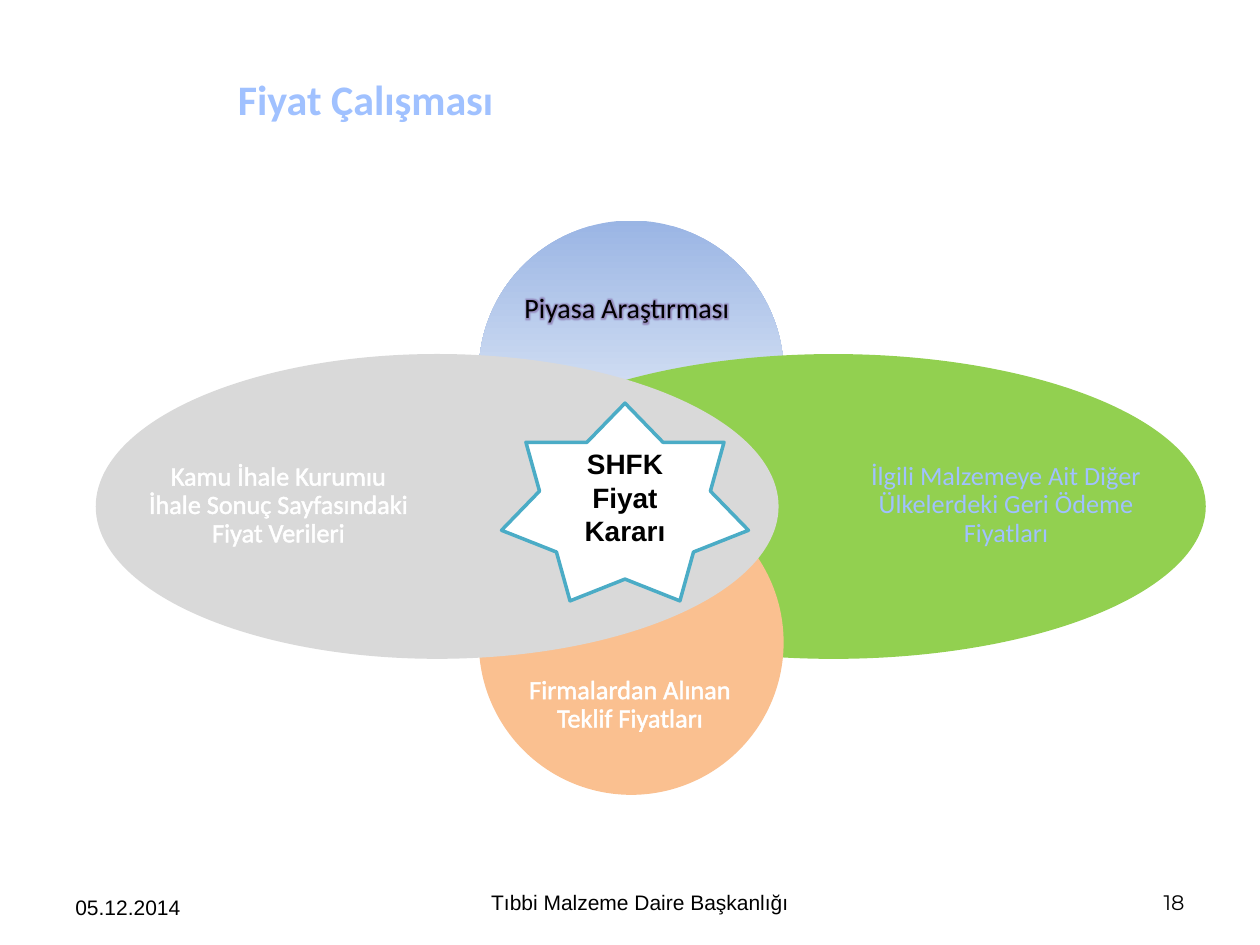
from lxml import etree
from pptx import Presentation
from pptx.dml.color import RGBColor
from pptx.enum.shapes import MSO_SHAPE
from pptx.enum.text import MSO_ANCHOR, PP_ALIGN
from pptx.oxml.ns import qn
from pptx.util import Pt

OVAL, STAR = MSO_SHAPE.OVAL, MSO_SHAPE.STAR_7_POINT
LEFT, CENTER, RIGHT = PP_ALIGN.LEFT, PP_ALIGN.CENTER, PP_ALIGN.RIGHT
MIDDLE, BOTTOM = MSO_ANCHOR.MIDDLE, MSO_ANCHOR.BOTTOM

BLACK = RGBColor(0x00, 0x00, 0x00)
WHITE = RGBColor(0xFF, 0xFF, 0xFF)
SKY = RGBColor(0xA0, 0xC1, 0xFF)
BLUE = RGBColor(0x9A, 0xB5, 0xE4)
GREEN = RGBColor(0x92, 0xD0, 0x50)
ORANGE = RGBColor(0xFA, 0xC0, 0x90)
GRAY = RGBColor(0xD9, 0xD9, 0xD9)
TEAL = RGBColor(0x4B, 0xAC, 0xC6)
PURPLE = RGBColor(0x80, 0x64, 0xA2)


def write(s, text, size, color, font="Arial", bold=False, align=CENTER, anchor=MIDDLE):
    tf = s.text_frame
    tf.word_wrap = True
    tf.vertical_anchor = anchor
    p = tf.paragraphs[0]
    p.alignment = align
    p.font.name = font
    p.font.size = Pt(size)
    p.font.bold = bold
    p.font.color.rgb = color
    r = p.add_run()
    r.text = text
    return r


def add_text(slide, box, text, size, color, **style):
    s = slide.shapes.add_textbox(*map(Pt, box))
    write(s, text, size, color, **style)
    return s


def add_shape(slide, kind, box, color):
    s = slide.shapes.add_shape(kind, *map(Pt, box))
    s.shadow.inherit = False
    s.fill.solid()
    s.fill.fore_color.rgb = color
    s.line.fill.background()
    return s


def add_label(slide, box, text, size, color):
    s = add_text(slide, box, text, size, color, font="Calibri")
    tf = s.text_frame
    tf.margin_left = tf.margin_right = tf.margin_top = tf.margin_bottom = 0
    p = tf.paragraphs[0]
    p.line_spacing = 0.9
    return p.runs[0]


def fade_down(s, top, bottom):
    s.fill.gradient()
    s.fill.gradient_angle = 270
    for stop, color, place in zip(s.fill.gradient_stops, (top, bottom), (0, 1)):
        stop.color.rgb = color
        stop.position = place


def add_color(parent, color):
    return etree.SubElement(parent, qn("a:srgbClr"), val=str(color))


def outline(r, color, width):
    ln = etree.SubElement(r.font._element, qn("a:ln"), w=str(Pt(width)))
    add_color(etree.SubElement(ln, qn("a:solidFill")), color)


def glow(r, color, radius):
    effects = etree.SubElement(r.font._element, qn("a:effectLst"))
    halo = etree.SubElement(effects, qn("a:glow"), rad=str(Pt(radius)))
    etree.SubElement(add_color(halo, color), qn("a:alpha"), val="60000")


def add_venn(slide):
    circle_x, wide_y, d = 273.6, 202.3, 174.2
    label_x, label_w, label_h = 293, 134, 55.4
    side_y, side_h = 221.8, 134

    top = add_shape(slide, OVAL, (circle_x, 126, d, d), BLUE)
    fade_down(top, BLUE, WHITE)
    r = add_label(slide, (label_x, 149, label_w, label_h), "Piyasa Araştırması ", 16, BLACK)
    glow(r, PURPLE, 5)

    add_shape(slide, OVAL, (263.5, wide_y, 425.5, d), GREEN)
    add_label(slide, (493.2, side_y, 163.4, side_h),
              "İlgili Malzemeye Ait Diğer Ülkelerdeki Geri Ödeme Fiyatları", 15, SKY)

    add_shape(slide, OVAL, (circle_x, 280, d, d), ORANGE)
    r = add_label(slide, (label_x, 375.1, label_w, label_h),
                  "Firmalardan Alınan Teklif Fiyatları", 15, WHITE)
    outline(r, WHITE, 1.45)

    add_shape(slide, OVAL, (54.7, wide_y, 390.2, d), GRAY)
    r = add_label(slide, (84.2, side_y, 149.8, side_h),
                  "Kamu İhale Kurumıu İhale Sonuç Sayfasındaki Fiyat Verileri", 15, WHITE)
    outline(r, WHITE, 1.45)


def add_star(slide):
    s = add_shape(slide, STAR, (286.6, 230.4, 141.1, 113), WHITE)
    s.line.color.rgb = TEAL
    s.line.width = Pt(2)
    write(s, "SHFK Fiyat Kararı", 16, BLACK, bold=True)


def add_footer(slide):
    add_text(slide, (36, 508.3, 84.2, 20.9), "05.12.2014", 12, BLACK,
             align=LEFT, anchor=BOTTOM)
    add_text(slide, (246.2, 502.6, 239, 25.2), "Tıbbi Malzeme Daire Başkanlığı", 12, BLACK)
    add_text(slide, (643.7, 502.6, 40.3, 25.2), "18", 12, BLACK,
             font="Montserrat", align=RIGHT)


def main():
    prs = Presentation()
    prs.slide_width, prs.slide_height = Pt(720), Pt(540)
    slide = prs.slides.add_slide(prs.slide_layouts[6])
    add_text(slide, (128.9, 20.9, 560.2, 71.3), "Fiyat Çalışması", 24, SKY,
             font="Calibri", bold=True, align=LEFT)
    add_footer(slide)
    add_venn(slide)
    add_star(slide)
    prs.save("out.pptx")


if __name__ == "__main__":
    main()
